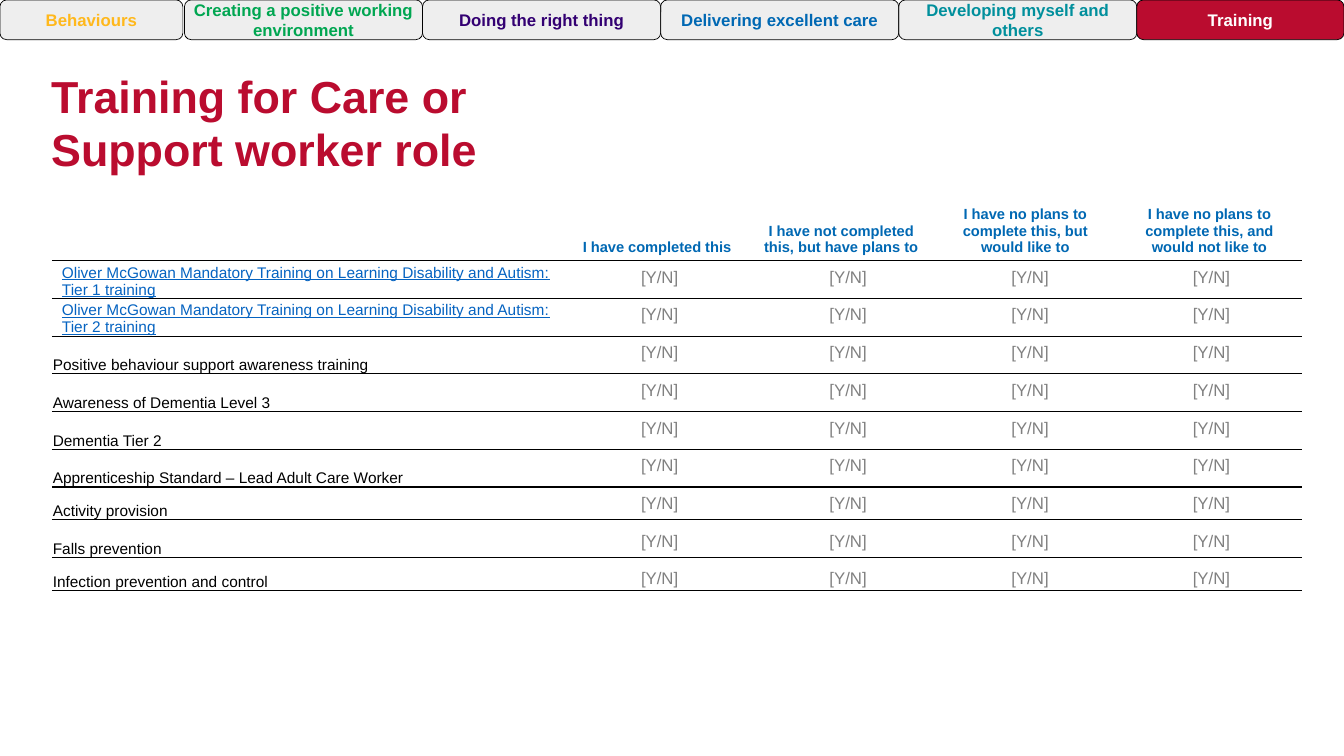
from dataclasses import dataclass

from lxml.etree import SubElement
from pptx import Presentation
from pptx.dml.color import RGBColor
from pptx.enum.shapes import MSO_SHAPE as Shape
from pptx.enum.text import MSO_ANCHOR as Anchor, MSO_AUTO_SIZE as AutoSize, PP_ALIGN as Align
from pptx.oxml.ns import qn
from pptx.slide import Slide
from pptx.table import _Cell as Cell
from pptx.text.text import TextFrame
from pptx.util import Cm, Pt


@dataclass(frozen=True)
class Theme:
    font: str = "Arial"
    red: str = "BA0C2F"
    blue: str = "0068B3"
    link: str = "0563C1"
    black: str = "000000"
    white: str = "FFFFFF"
    tab_grey: str = "CACACA"
    answer_grey: str = "808080"
    title_size: float = 32
    body_size: float = 12
    course_size: float = 11
    heading_size: float = 10.5


THEME = Theme()


@dataclass(frozen=True)
class Tab:
    label: str
    left: float
    width: float
    color: str
    active: bool = False


@dataclass(frozen=True)
class Course:
    name: str
    height: float = 0.95
    linked: bool = False


@dataclass(frozen=True)
class AnswerColumn:
    heading: str
    left: float
    width: float


TAB_START, TAB_WIDTH = 4.65, 6
TABS = [
    Tab("Behaviours", 0, 4.61, "FFB81C"),
    *(
        Tab(label, TAB_START + index * TAB_WIDTH, TAB_WIDTH, color)
        for index, (label, color) in enumerate([
            ("Creating a positive working environment", "00A651"),
            ("Doing the right thing", "330072"),
            ("Delivering excellent care", THEME.blue),
            ("Developing myself and others", "008F9C"),
        ])
    ),
    Tab("Training", 28.65, 5.22, THEME.white, active=True),
]

MANDATORY = "Oliver McGowan Mandatory Training on Learning Disability and Autism: "
COURSES = [
    Course(MANDATORY + "Tier 1 training", linked=True),
    Course(MANDATORY + "Tier 2 training", linked=True),
    Course("Positive behaviour support awareness training"),
    Course("Awareness of Dementia Level 3"),
    Course("Dementia Tier 2"),
    Course("Apprenticeship Standard – Lead Adult Care Worker"),
    Course("Activity provision", height=0.83),
    Course("Falls prevention"),
    Course("Infection prevention and control", height=0.83),
]
ANSWER_COLUMNS = [
    AnswerColumn("I have completed this", 14.4, 4.45),
    AnswerColumn("I have not completed this, but have plans to", 19.05, 4.65),
    AnswerColumn("I have no plans to complete this, but would like to", 23.93, 4.06),
    AnswerColumn("I have no plans to complete this, and would not like to", 28.5, 4.06),
]
COURSE_WIDTH, ANSWER_WIDTH, HEADING_HEIGHT = 12.93, 4.64, 1.63
ANSWER_TOP, ANSWER_STEP, ANSWER_HEIGHT = 6.59, 0.95, 0.77


def write(frame: TextFrame, lines: list[str], size: float, color: str,
          align: Align = Align.CENTER, bold: bool = False, underline: bool = False) -> None:
    """Fill the frame with one paragraph per line."""
    for index, line in enumerate(lines):
        para = frame.add_paragraph() if index else frame.paragraphs[0]
        para.alignment = align
        span = para.add_run()
        span.text = line
        span.font.name = THEME.font
        span.font.size = Pt(size)
        span.font.bold = bold
        span.font.underline = underline
        span.font.color.rgb = RGBColor.from_string(color)


def add_title(page: Slide) -> None:
    title = page.shapes.title
    title.left, title.top, title.width, title.height = Cm(1.04), Cm(1.47), Cm(12), Cm(3.3)
    frame = title.text_frame
    frame.auto_size = AutoSize.NONE
    frame.word_wrap = True
    frame.vertical_anchor = Anchor.TOP
    frame.margin_left = frame.margin_right = frame.margin_top = frame.margin_bottom = Cm(0.25)
    write(frame, ["Training for Care or", "Support worker role"],
          THEME.title_size, THEME.red, Align.LEFT, bold=True)


def add_tab(page: Slide, tab: Tab) -> None:
    box = page.shapes.add_shape(Shape.ROUNDED_RECTANGLE, Cm(tab.left), 0, Cm(tab.width), Cm(1))
    box.shadow.inherit = False
    box.fill.solid()
    box.fill.fore_color.rgb = RGBColor.from_string(THEME.red if tab.active else THEME.tab_grey)
    if not tab.active:
        color = box.fill._xPr.find(qn("a:solidFill"))[0]
        SubElement(color, qn("a:alpha"), val="30000")
    box.line.color.rgb = RGBColor.from_string(THEME.black)
    box.line.width = Pt(0.5)
    frame = box.text_frame
    frame.word_wrap = True
    frame.vertical_anchor = Anchor.MIDDLE
    frame.margin_left = frame.margin_right = 0
    write(frame, [tab.label], THEME.body_size, tab.color, bold=True)


def format_cell(cell: Cell, is_heading: bool) -> None:
    """Rule the cell above and below, leaving its sides and the table top open."""
    properties = cell._tc.get_or_add_tcPr()
    for side in ("lnL", "lnR", "lnT", "lnB"):
        line = SubElement(properties, qn(f"a:{side}"), w=str(Pt(1)))
        if side == "lnB" or (side == "lnT" and not is_heading):
            fill = SubElement(line, qn("a:solidFill"))
            SubElement(fill, qn("a:srgbClr"), val=THEME.black)
        else:
            SubElement(line, qn("a:noFill"))
    if is_heading:
        cell.fill.solid()
        cell.fill.fore_color.rgb = RGBColor.from_string(THEME.white)
    else:
        cell.fill.background()
    cell.vertical_anchor = Anchor.BOTTOM
    cell.margin_left = cell.margin_right = cell.margin_top = cell.margin_bottom = 0


def add_training_table(page: Slide) -> None:
    widths = [COURSE_WIDTH] + [ANSWER_WIDTH] * len(ANSWER_COLUMNS)
    heights = [HEADING_HEIGHT] + [course.height for course in COURSES]
    table = page.shapes.add_table(len(heights), len(widths), Cm(1.31), Cm(4.94),
                                  Cm(sum(widths)), Cm(sum(heights))).table
    table.first_row = table.horz_banding = False
    for column, width in zip(table.columns, widths):
        column.width = Cm(width)
    for index, (row, height) in enumerate(zip(table.rows, heights)):
        row.height = Cm(height)
        for cell in row.cells:
            format_cell(cell, is_heading=index == 0)

    for index, column in enumerate(ANSWER_COLUMNS, start=1):
        cell = table.cell(0, index)
        cell.margin_left = cell.margin_right = Cm(0.28)
        cell.margin_top = cell.margin_bottom = Cm(0.13)
        write(cell.text_frame, [column.heading], THEME.heading_size, THEME.blue, bold=True)
    for index, course in enumerate(COURSES, start=1):
        cell = table.cell(index, 0)
        cell.margin_left = Cm(0.25 if course.linked else 0.02)
        cell.margin_right = cell.margin_top = Cm(0.02)
        write(cell.text_frame, [course.name], THEME.course_size,
              THEME.link if course.linked else THEME.black, Align.LEFT, underline=course.linked)


def add_answers(page: Slide) -> None:
    for index in range(len(COURSES)):
        for column in ANSWER_COLUMNS:
            box = page.shapes.add_textbox(Cm(column.left), Cm(ANSWER_TOP + index * ANSWER_STEP),
                                          Cm(column.width), Cm(ANSWER_HEIGHT))
            box.text_frame.word_wrap = True
            write(box.text_frame, ["[Y/N]"], THEME.body_size, THEME.answer_grey)


def main() -> None:
    deck = Presentation()
    deck.slide_width, deck.slide_height = Cm(33.87), Cm(19.05)
    page = deck.slides.add_slide(deck.slide_layouts[5])
    add_title(page)
    for tab in TABS:
        add_tab(page, tab)
    add_training_table(page)
    add_answers(page)
    deck.save("out.pptx")


if __name__ == "__main__":
    main()
